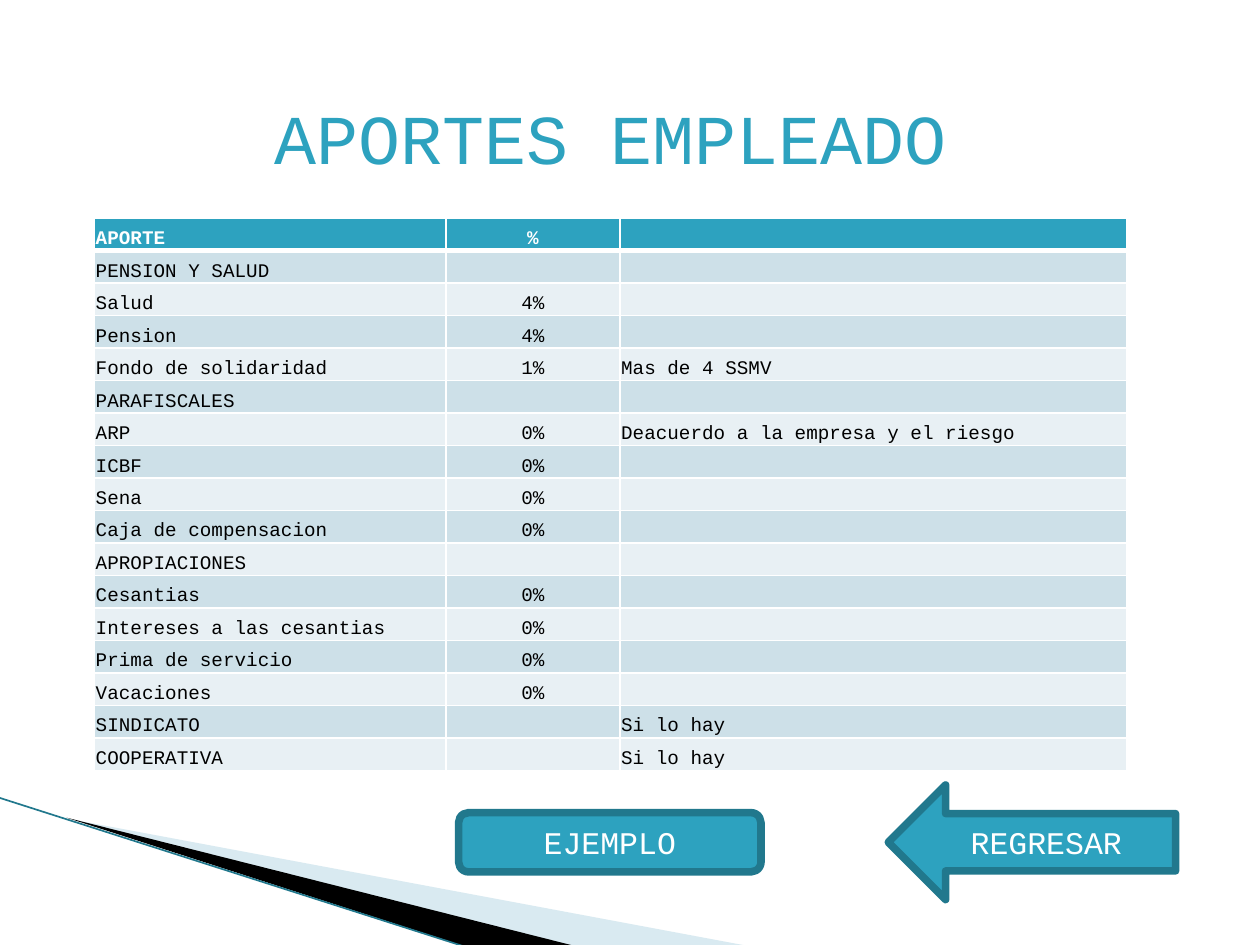
import dataclasses

import lxml.etree
import pptx
import pptx.dml.color
import pptx.enum.shapes
import pptx.enum.text
import pptx.oxml.ns
import pptx.util

Inches = pptx.util.Inches
Pt = pptx.util.Pt
ALIGN = pptx.enum.text.PP_ALIGN
ANCHOR = pptx.enum.text.MSO_ANCHOR
SHAPES = pptx.enum.shapes.MSO_SHAPE
qn = pptx.oxml.ns.qn


@dataclasses.dataclass(frozen=True)
class Theme:
    font: str = "Courier New"
    accent: str = "2DA2BF"
    outline: str = "21788D"
    white: str = "FFFFFF"
    black: str = "000000"
    pale_wedge: str = "A0CBDC"
    bands: tuple = ("CDE0E8", "E8F0F4")
    title_size: int = 40
    button_size: int = 18
    table_size: int = 11


THEME = Theme()

HEADER = ("APORTE", "%", "")
CONTRIBUTIONS = [
    ("PENSION Y SALUD", "", ""),
    ("Salud", "4%", ""),
    ("Pension", "4%", ""),
    ("Fondo de solidaridad", "1%", "Mas de 4 SSMV"),
    ("PARAFISCALES", "", ""),
    ("ARP", "0%", "Deacuerdo a la empresa y el riesgo"),
    ("ICBF", "0%", ""),
    ("Sena", "0%", ""),
    ("Caja de compensacion", "0%", ""),
    ("APROPIACIONES", "", ""),
    ("Cesantias", "0%", ""),
    ("Intereses a las cesantias", "0%", ""),
    ("Prima de servicio", "0%", ""),
    ("Vacaciones", "0%", ""),
    ("SINDICATO", "", "Si lo hay"),
    ("COOPERATIVA", "", "Si lo hay"),
]
COLUMN_WIDTHS = (2.79, 1.38, 4.02)
COLUMN_ALIGNS = (ALIGN.LEFT, ALIGN.CENTER, ALIGN.LEFT)


def rgb(color):
    return pptx.dml.color.RGBColor.from_string(color)


def set_all(target, values):
    for name, value in values.items():
        setattr(target, name, value)


def paint(fill, color):
    fill.solid()
    fill.fore_color.rgb = rgb(color)


def write(paragraph, text, size, color, align=ALIGN.CENTER, bold=False):
    paragraph.alignment = align
    run = paragraph.add_run()
    run.text = text
    set_all(run.font, {"name": THEME.font, "size": Pt(size), "bold": bold})
    run.font.color.rgb = rgb(color)


def add_wedge(slide, points, color, opacity=100):
    corners = [(Inches(x), Inches(y)) for x, y in points]
    builder = slide.shapes.build_freeform(*corners[0])
    builder.add_line_segments(corners[1:], close=True)
    wedge = builder.convert_to_shape()
    wedge.shadow.inherit = False
    paint(wedge.fill, color)
    wedge.line.fill.background()
    if opacity < 100:
        tint = wedge.fill._xPr.find(".//" + qn("a:srgbClr"))
        lxml.etree.SubElement(tint, qn("a:alpha"), val=str(opacity * 1000))


def add_edge_line(slide, start, end):
    edge = slide.shapes.add_connector(
        pptx.enum.shapes.MSO_CONNECTOR.STRAIGHT,
        *(Inches(v) for v in (*start, *end)))
    edge.line.width = Pt(0.95)
    edge.line.color.rgb = rgb(THEME.outline)
    lxml.etree.SubElement(edge._element.spPr, qn("a:effectLst"))


def add_title(slide, text, box):
    frame = slide.shapes.add_textbox(*(Inches(v) for v in box)).text_frame
    set_all(frame, {"word_wrap": True, "margin_top": Inches(0.17),
                    "margin_bottom": 0})
    write(frame.paragraphs[0], text, THEME.title_size, THEME.accent)


def add_button(slide, kind, text, box):
    button = slide.shapes.add_shape(kind, *(Inches(v) for v in box))
    button.shadow.inherit = False
    paint(button.fill, THEME.accent)
    button.line.width = Pt(4.33)
    button.line.color.rgb = rgb(THEME.outline)
    button.text_frame.vertical_anchor = ANCHOR.MIDDLE
    write(button.text_frame.paragraphs[0], text, THEME.button_size, THEME.white)


def add_borders(cell, top, bottom):
    """Draw white cell borders; call before the cell gets its fill."""
    properties = cell._tc.get_or_add_tcPr()
    for side, width in {"L": 1, "R": 1, "T": top, "B": bottom}.items():
        border = lxml.etree.SubElement(properties, qn("a:ln" + side),
                                       w=str(Pt(width)))
        solid = lxml.etree.SubElement(border, qn("a:solidFill"))
        lxml.etree.SubElement(solid, qn("a:srgbClr"), val=THEME.white)


def fill_cell(cell, text, row, align):
    is_header = row == 0
    add_borders(cell, top=3 if row == 1 else 1, bottom=3 if is_header else 1)
    paint(cell.fill, THEME.accent if is_header else THEME.bands[(row - 1) % 2])
    set_all(cell, {"vertical_anchor": ANCHOR.BOTTOM, "margin_bottom": 0,
                   "margin_left": Inches(0.01), "margin_right": Inches(0.01),
                   "margin_top": Inches(0.01)})
    paragraph = cell.text_frame.paragraphs[0]
    if text:
        write(paragraph, text, THEME.table_size,
              THEME.white if is_header else THEME.black, align, is_header)
    else:
        # A small end mark keeps an empty cell from stretching its row.
        paragraph._p.get_or_add_endParaRPr().set(
            "sz", str(THEME.table_size * 100))


def add_contributions_table(slide, left, top, height):
    rows = [HEADER, *CONTRIBUTIONS]
    table = slide.shapes.add_table(
        len(rows), len(HEADER), Inches(left), Inches(top),
        Inches(sum(COLUMN_WIDTHS)), Inches(height)).table
    for column, width in zip(table.columns, COLUMN_WIDTHS):
        column.width = Inches(width)
    for r, texts in enumerate(rows):
        table.rows[r].height = Inches(height / len(rows))
        for c, text in enumerate(texts):
            fill_cell(table.cell(r, c), text, r, COLUMN_ALIGNS[c])


def main():
    deck = pptx.Presentation()
    set_all(deck, {"slide_width": Inches(10), "slide_height": Inches(7.5)})
    slide = deck.slides.add_slide(deck.slide_layouts[6])

    add_wedge(slide, [(0.55, 6.5), (5.95, 7.51), (4.56, 7.51)],
              THEME.pale_wedge, opacity=40)
    add_wedge(slide, [(0.53, 6.49), (4.57, 7.51), (3.72, 7.52)], THEME.black)
    add_edge_line(slide, (-0.01, 6.33), (3.71, 7.52))

    add_title(slide, "APORTES EMPLEADO", (0.39, 0.58, 8.9, 0.77))
    add_button(slide, SHAPES.ROUNDED_RECTANGLE, "EJEMPLO",
               (3.64, 6.45, 2.4, 0.47))
    add_contributions_table(slide, left=0.75, top=1.73, height=4.39)
    add_button(slide, SHAPES.LEFT_ARROW, "REGRESAR", (7.05, 6.23, 2.28, 0.91))

    deck.save("out.pptx")


if __name__ == "__main__":
    main()
